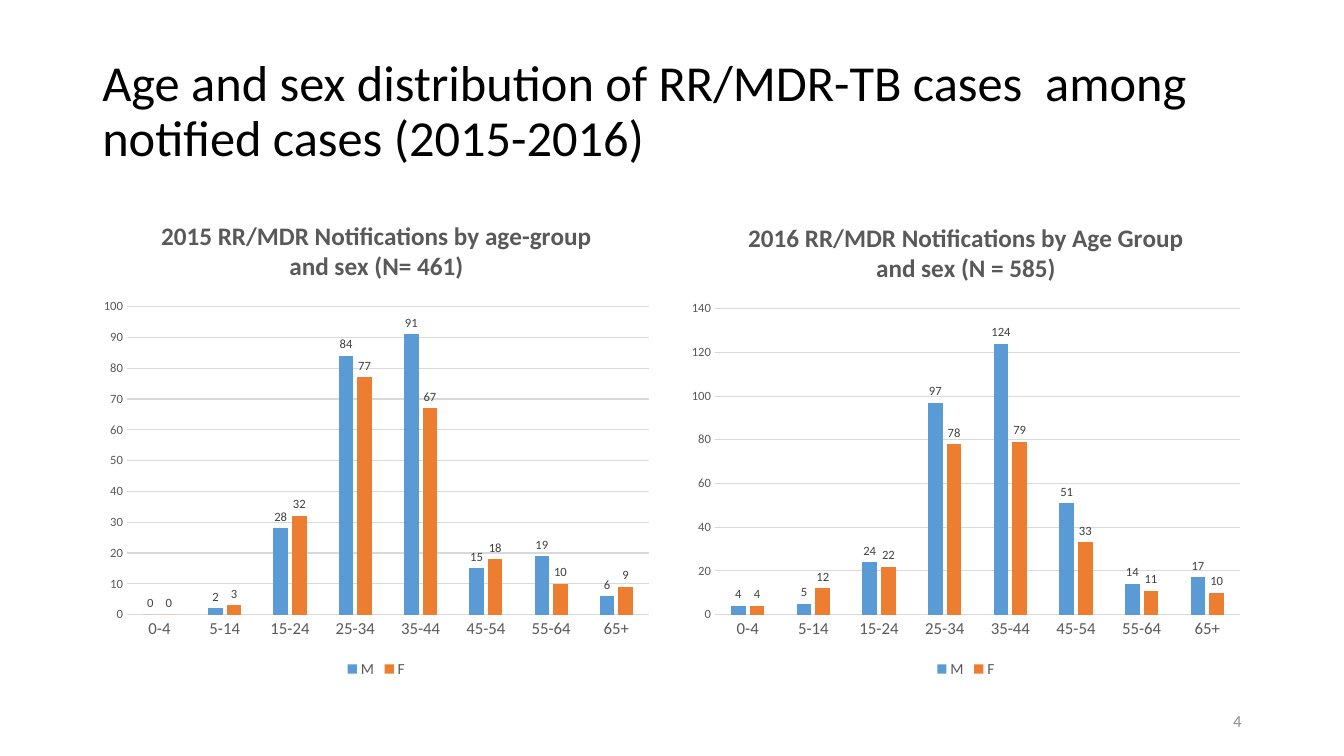
import pptx
import pptx.chart.data
import pptx.dml.color
import pptx.enum.chart
import pptx.enum.text
import pptx.util

PX = 9525
FONT = "Calibri"
COLORS = {
    "title": "000000",
    "muted": "595959",
    "label": "404040",
    "grid": "D9D9D9",
    "page_number": "8C8C8C",
    "M": "5B9BD5",
    "F": "ED7D31",
}
AGE_GROUPS = ["0-4", "5-14", "15-24", "25-34", "35-44", "45-54", "55-64", "65+"]
CHARTS = [
    {
        "box": (88, 189, 541, 461),
        "title": "2015 RR/MDR Notifications by age-group and sex (N= 461)",
        "cases": {
            "M": [0, 2, 28, 84, 91, 15, 19, 6],
            "F": [0, 3, 32, 77, 67, 18, 10, 9],
        },
        "maximum": 100,
        "step": 10,
    },
    {
        "box": (648, 191, 544, 459),
        "title": "2016 RR/MDR Notifications by Age Group and sex (N = 585)",
        "cases": {
            "M": [4, 5, 24, 97, 124, 51, 14, 17],
            "F": [4, 12, 22, 78, 79, 33, 11, 10],
        },
        "maximum": 140,
        "step": 20,
    },
]


def color(name):
    return pptx.dml.color.RGBColor.from_string(COLORS[name])


def emu(box):
    return [pptx.util.Emu(length * PX) for length in box]


def style_font(font, size, color_name, bold=False):
    font.name = FONT
    font.size = pptx.util.Pt(size)
    font.bold = bold
    font.color.rgb = color(color_name)


def style_line(line, color_name):
    line.color.rgb = color(color_name)
    line.width = pptx.util.Pt(0.75)


def add_text(page, box, text, size, color_name, align, spacing=1.0):
    frame = page.shapes.add_textbox(*emu(box)).text_frame
    frame.word_wrap = True
    frame.vertical_anchor = pptx.enum.text.MSO_ANCHOR.MIDDLE
    para = frame.paragraphs[0]
    para.alignment = align
    para.line_spacing = spacing
    span = para.add_run()
    span.text = text
    style_font(span.font, size, color_name)


def style_axes(chart, maximum, step):
    ages = chart.category_axis
    counts = chart.value_axis
    for axis, size in ((ages, 12), (counts, 9)):
        axis.major_tick_mark = pptx.enum.chart.XL_TICK_MARK.NONE
        axis.minor_tick_mark = pptx.enum.chart.XL_TICK_MARK.NONE
        style_font(axis.tick_labels.font, size, "muted")
    style_line(ages.format.line, "grid")
    counts.format.line.fill.background()
    counts.has_major_gridlines = True
    style_line(counts.major_gridlines.format.line, "grid")
    counts.minimum_scale = 0
    counts.maximum_scale = maximum
    counts.major_unit = step


def style_columns(plot):
    plot.gap_width = 219
    plot.overlap = -27
    plot.vary_by_categories = False
    for series in plot.series:
        series.format.fill.solid()
        series.format.fill.fore_color.rgb = color(series.name)
        series.invert_if_negative = False
        labels = series.data_labels
        labels.show_value = True
        labels.position = pptx.enum.chart.XL_LABEL_POSITION.OUTSIDE_END
        style_font(labels.font, 9, "label")


def add_notifications_chart(page, box, title, cases, maximum, step):
    data = pptx.chart.data.CategoryChartData()
    data.categories = AGE_GROUPS
    for sex, values in cases.items():
        data.add_series(sex, values)
    kind = pptx.enum.chart.XL_CHART_TYPE.COLUMN_CLUSTERED
    chart = page.shapes.add_chart(kind, *emu(box), data).chart
    style_font(chart.font, 10, "title")
    chart.has_title = True
    chart.chart_title.include_in_layout = False
    span = chart.chart_title.text_frame.paragraphs[0].add_run()
    span.text = title
    style_font(span.font, 18, "muted", bold=True)
    chart.has_legend = True
    chart.legend.position = pptx.enum.chart.XL_LEGEND_POSITION.BOTTOM
    chart.legend.include_in_layout = False
    style_font(chart.legend.font, 11, "muted")
    style_axes(chart, maximum, step)
    style_columns(chart.plots[0])


def main():
    deck = pptx.Presentation()
    deck.slide_width, deck.slide_height = emu((1280, 720))
    page = deck.slides.add_slide(deck.slide_layouts[6])
    align = pptx.enum.text.PP_ALIGN
    add_text(
        page, (88, 38, 1104, 139),
        "Age and sex distribution of RR/MDR-TB cases  among notified cases (2015-2016)",
        36, "title", align.LEFT, 0.9,
    )
    for chart in CHARTS:
        add_notifications_chart(page, **chart)
    add_text(page, (904, 667, 288, 38), "4", 12, "page_number", align.RIGHT)
    deck.save("out.pptx")


if __name__ == "__main__":
    main()
